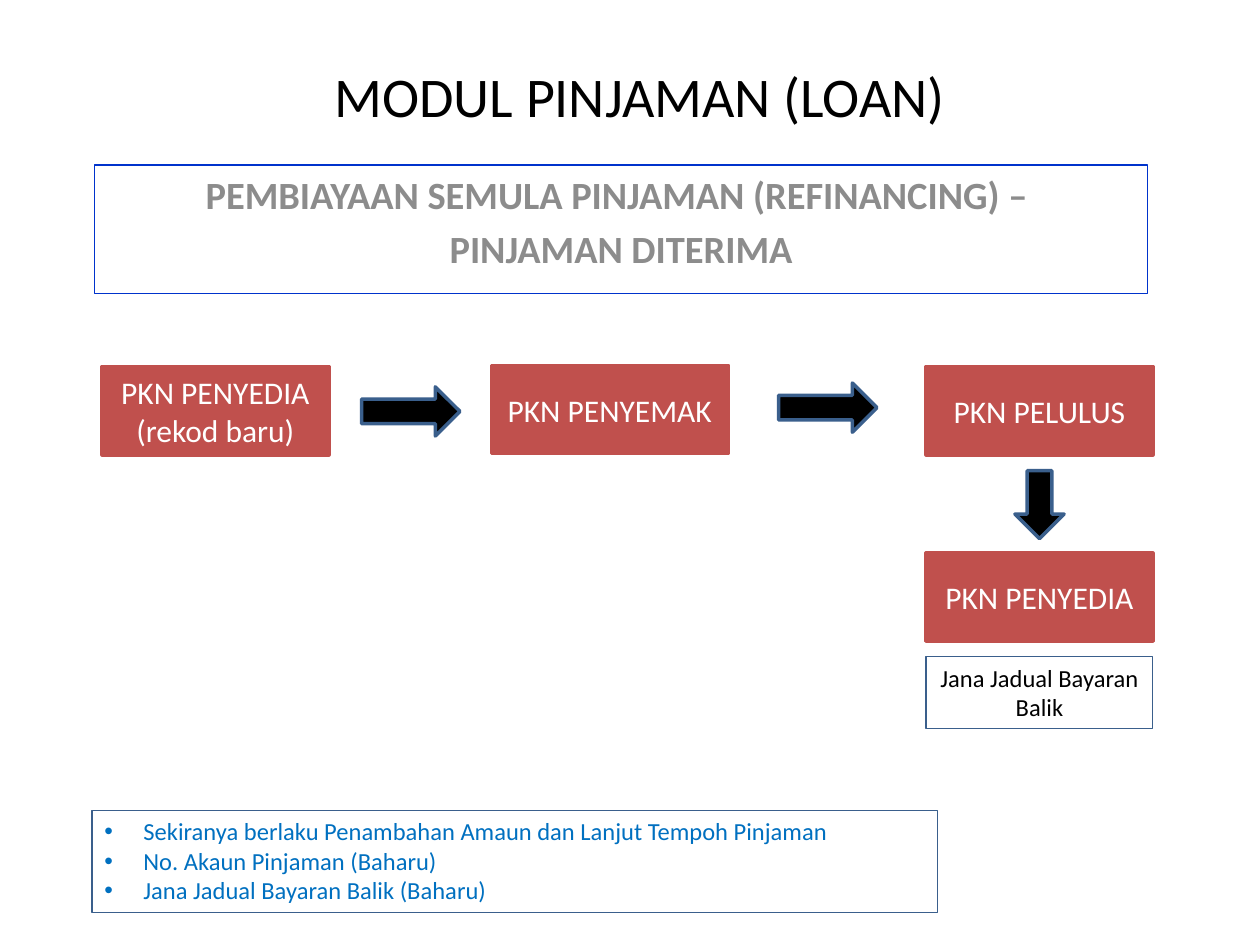
from pptx import Presentation
from pptx.dml.color import RGBColor
from pptx.enum.shapes import MSO_SHAPE
from pptx.enum.text import MSO_ANCHOR, PP_ALIGN
from pptx.oxml.ns import qn
from pptx.util import Inches, Pt
from lxml.etree import SubElement

HEX = {
    "black": "000000", "white": "FFFFFF", "red": "C0504D", "navy": "0033CC",
    "steel": "3A5F8C", "gray": "8C8C8C", "blue": "0070C0",
}


def color(name):
    """Return the named colour."""
    return RGBColor.from_string(HEX[name])


def write(shape, lines, size, ink, bold=False, align=PP_ALIGN.CENTER,
          anchor=MSO_ANCHOR.TOP, before=0, bullet=None):
    """Fill a shape with one paragraph for each line."""
    frame = shape.text_frame
    frame.word_wrap = True
    frame.vertical_anchor = anchor
    for i, line in enumerate(lines):
        para = frame.add_paragraph() if i else frame.paragraphs[0]
        para.alignment = align
        para.space_before = Pt(before)
        run = para.add_run()
        run.text = line
        font = run.font
        font.name, font.size, font.bold = "Calibri", Pt(size), bold
        font.color.rgb = color(ink)
        if bullet:
            props = para._p.get_or_add_pPr()
            props.set("marL", str(Inches(0.31)))
            props.set("indent", str(-Inches(0.31)))
            SubElement(props, qn("a:buFont")).set("typeface", "Arial")
            SubElement(props, qn("a:buChar")).set("char", bullet)


def draw(slide, box, line, width=0.75, fill=None, kind=MSO_SHAPE.RECTANGLE):
    """Add a flat shape in the given box."""
    shape = slide.shapes.add_shape(kind, *map(Inches, box))
    shape.shadow.inherit = False
    if fill:
        shape.fill.solid()
        shape.fill.fore_color.rgb = color(fill)
    else:
        shape.fill.background()
    shape.line.color.rgb = color(line)
    shape.line.width = Pt(width)
    return shape


def head(slide, box):
    """Place the slide title."""
    title = slide.shapes.title
    title.left, title.top, title.width, title.height = map(Inches, box)
    write(title, ["MODUL PINJAMAN (LOAN)"], 32, "black")


def banner(slide, box):
    """Place the framed subtitle."""
    lines = ["PEMBIAYAAN SEMULA PINJAMAN (REFINANCING) – ", "PINJAMAN DITERIMA"]
    write(draw(slide, box, "navy"), lines, 22, "gray", bold=True, before=4.4)


def step(slide, box, lines):
    """Place one red step of the flow."""
    shape = draw(slide, box, "red", 2, "red")
    write(shape, lines, 18, "white", anchor=MSO_ANCHOR.MIDDLE)


def arrow(slide, box, turn=0):
    """Place one black block arrow."""
    shape = draw(slide, box, "steel", 2, "black", MSO_SHAPE.RIGHT_ARROW)
    shape.rotation = turn


def flow(slide, box):
    """Place the steps, their arrows and the result under the last step."""
    left, top, width, _ = box
    wide, high = 1.8, 0.7
    last = left + width - wide
    step(slide, (left, top, wide, high), ["PKN PENYEDIA", "(rekod baru)"])
    arrow(slide, (left + 2.06, top + 0.16, 0.78, 0.39))
    step(slide, (left + 3.09, top - 0.01, 1.88, high), ["PKN PENYEMAK"])
    arrow(slide, (left + 5.37, top + 0.13, 0.78, 0.39))
    step(slide, (last, top, wide, high), ["PKN PELULUS"])
    arrow(slide, (last + (wide - 0.54) / 2, top + 0.9, 0.54, 0.39), 90)
    step(slide, (last, top + 1.48, wide, high), ["PKN PENYEDIA"])
    result = draw(slide, (last, top + 2.3, wide, 0.57), "steel")
    write(result, ["Jana Jadual Bayaran Balik"], 14, "black")


def notes(slide, box):
    """Place the framed list of remarks."""
    lines = [
        "Sekiranya berlaku Penambahan Amaun dan Lanjut Tempoh Pinjaman",
        "No. Akaun Pinjaman (Baharu)",
        "Jana Jadual Bayaran Balik (Baharu)",
    ]
    write(draw(slide, box, "steel"), lines, 14, "blue",
          align=PP_ALIGN.LEFT, bullet="•")


def main():
    """Build and save the slide."""
    deck = Presentation()
    deck.slide_width, deck.slide_height = Inches(10), Inches(7.5)
    slide = deck.slides.add_slide(deck.slide_layouts[5])
    head(slide, (1.93, 0.44, 6.3, 0.64))
    banner(slide, (0.75, 1.31, 8.36, 1.02))
    flow(slide, (0.81, 2.91, 8.34, 2.87))
    notes(slide, (0.73, 6.43, 6.71, 0.81))
    deck.save("out.pptx")


if __name__ == "__main__":
    main()
